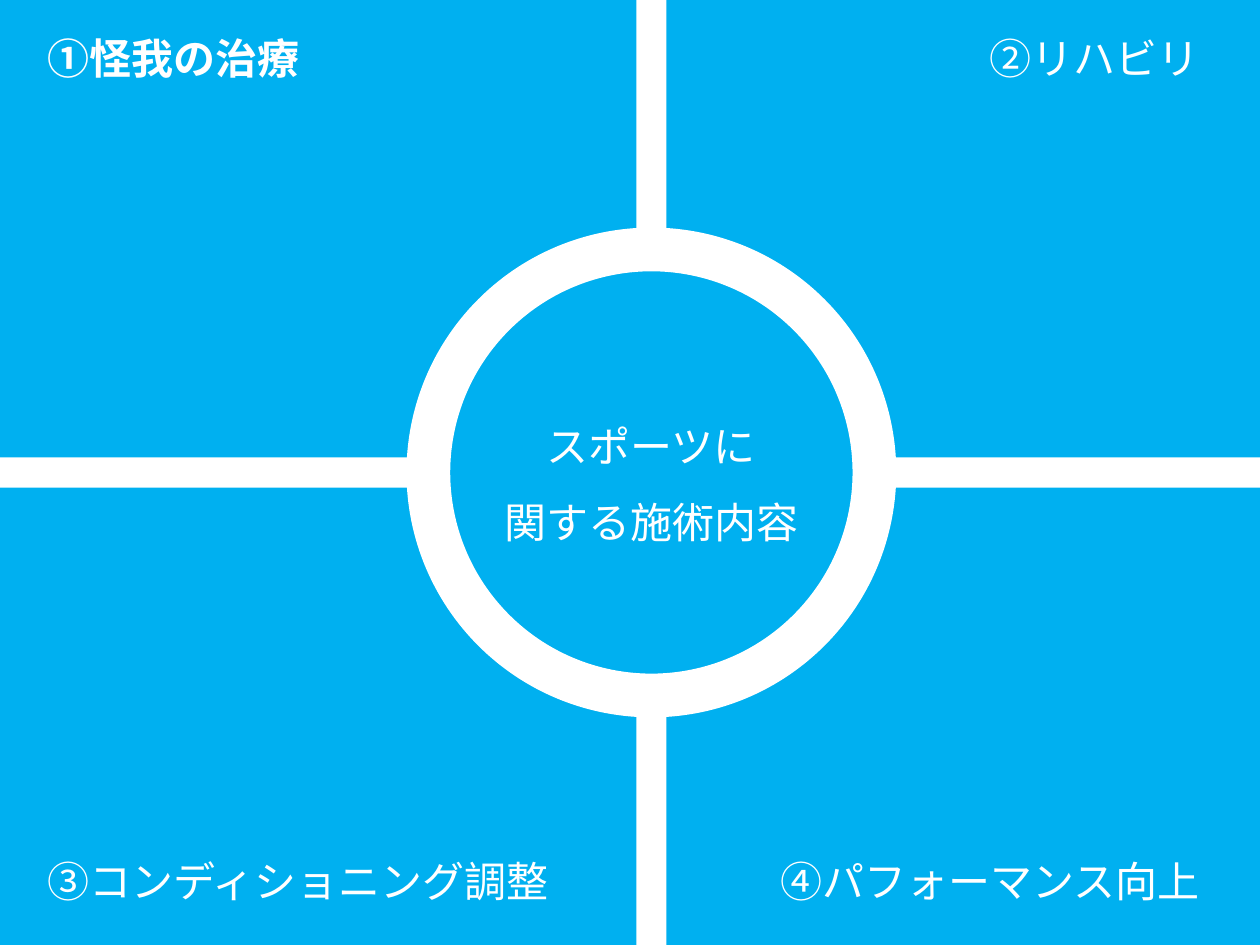
from lxml import etree
from pptx import Presentation
from pptx.dml.color import RGBColor
from pptx.enum.shapes import MSO_SHAPE
from pptx.enum.text import MSO_AUTO_SIZE, PP_ALIGN
from pptx.oxml.ns import qn
from pptx.util import Inches, Pt

RECT, OVAL = MSO_SHAPE.RECTANGLE, MSO_SHAPE.OVAL
LEFT, CENTER, RIGHT = PP_ALIGN.LEFT, PP_ALIGN.CENTER, PP_ALIGN.RIGHT
FIT = MSO_AUTO_SIZE.SHAPE_TO_FIT_TEXT
BLUE = RGBColor(0x00, 0xB0, 0xF0)
WHITE = RGBColor(0xFF, 0xFF, 0xFF)
FONT = "Noto Sans CJK JP"
W, H = 10, 7.5
CX, CY = 5.17, H / 2
BAR, CIRCLE = 0.24, 3.54
X_LEFT, X_RIGHT = 0.28, 9.62
Y_TOP, Y_BOTTOM = 0.21, 6.74
LABELS = [
    ("①怪我の治療", 2.22, LEFT, Y_TOP, True),
    ("②リハビリ", 2.22, RIGHT, Y_TOP, False),
    ("③コンディショニング調整", 4.24, LEFT, Y_BOTTOM, False),
    ("④パフォーマンス向上", 3.9, RIGHT, Y_BOTTOM, False),
]


def add_block(s, kind, x, y, w, h, fill, line=None):
    """Add a flat filled shape, with an outline if a colour is given."""
    sp = s.shapes.add_shape(kind, Inches(x), Inches(y), Inches(w), Inches(h))
    sp.shadow.inherit = False
    sp.fill.solid()
    sp.fill.fore_color.rgb = fill
    if line is None:
        sp.line.fill.background()
    else:
        sp.line.color.rgb = line
        sp.line.width = Pt(25)


def add_text(s, text, x, y, w, h=0.5, align=LEFT, bold=False, spacing=None):
    """Add a text box with one paragraph for each line of the text."""
    tf = s.shapes.add_textbox(Inches(x), Inches(y), Inches(w), Inches(h)).text_frame
    tf.word_wrap = True
    tf.auto_size = FIT
    tf.text = text
    for p in tf.paragraphs:
        p.alignment = align
        p.line_spacing = spacing
        for r in p.runs:
            r.font.size = Pt(24)
            r.font.bold = bold
            r.font.name = FONT
            r.font.color.rgb = WHITE
            etree.SubElement(r.font._element, qn("a:ea"), typeface=FONT)


def main():
    """Build the four-quadrant slide and save it."""
    prs = Presentation()
    prs.slide_width, prs.slide_height = Inches(W), Inches(H)
    s = prs.slides.add_slide(prs.slide_layouts[6])
    add_block(s, RECT, 0, 0, W, H, BLUE)
    add_block(s, RECT, 0, CY - BAR / 2, W, BAR, WHITE)
    add_block(s, RECT, CX - BAR / 2, 0, BAR, H, WHITE)
    for text, w, align, y, bold in LABELS:
        x = X_LEFT if align == LEFT else X_RIGHT - w
        add_text(s, text, x, y, w, align=align, bold=bold)
    add_block(s, OVAL, CX - CIRCLE / 2, CY - CIRCLE / 2, CIRCLE, CIRCLE, BLUE, line=WHITE)
    add_text(s, "スポーツに\n関する施術内容", CX - 1.4, 3.09, 2.8, 1.31,
             align=CENTER, spacing=1.5)
    prs.save("out.pptx")


if __name__ == "__main__":
    main()
